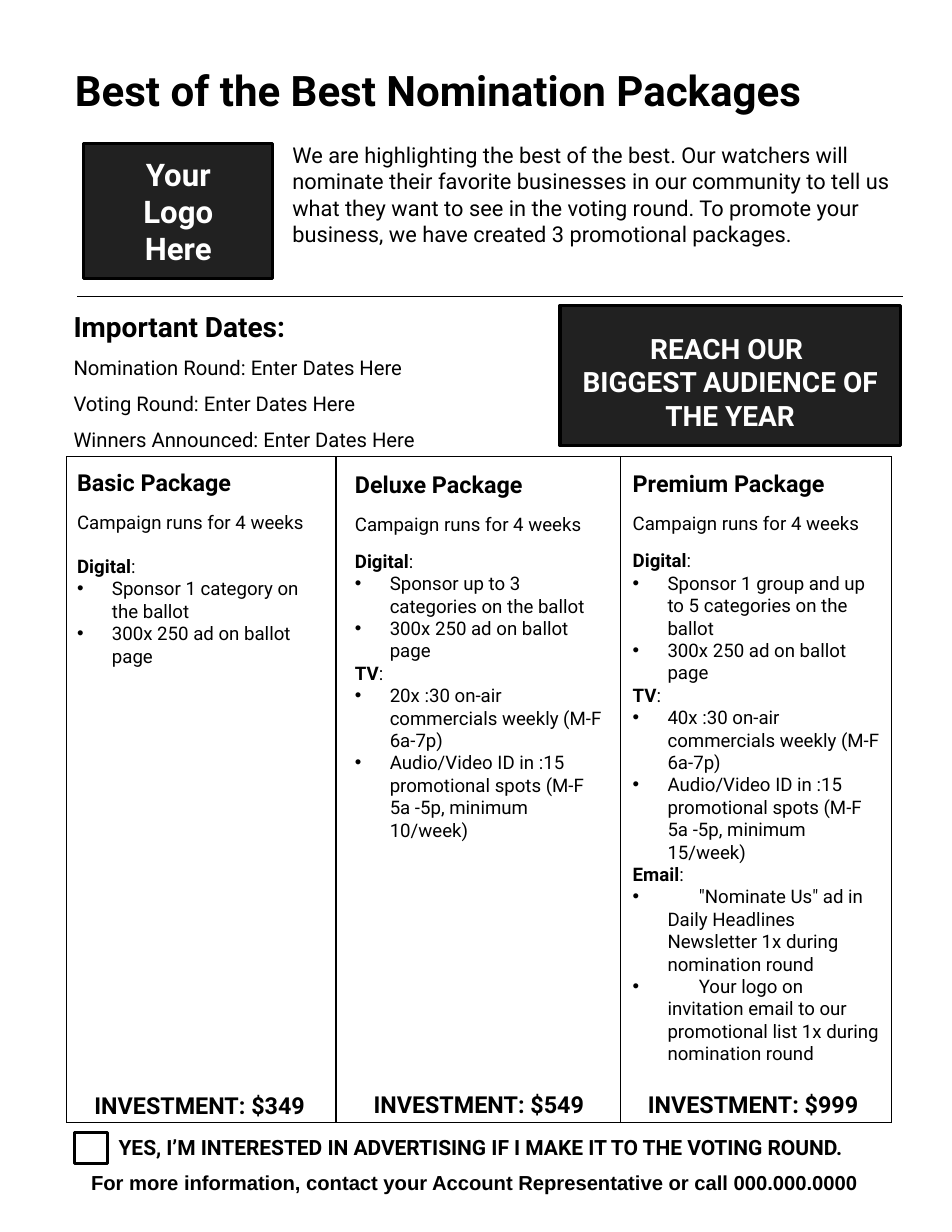
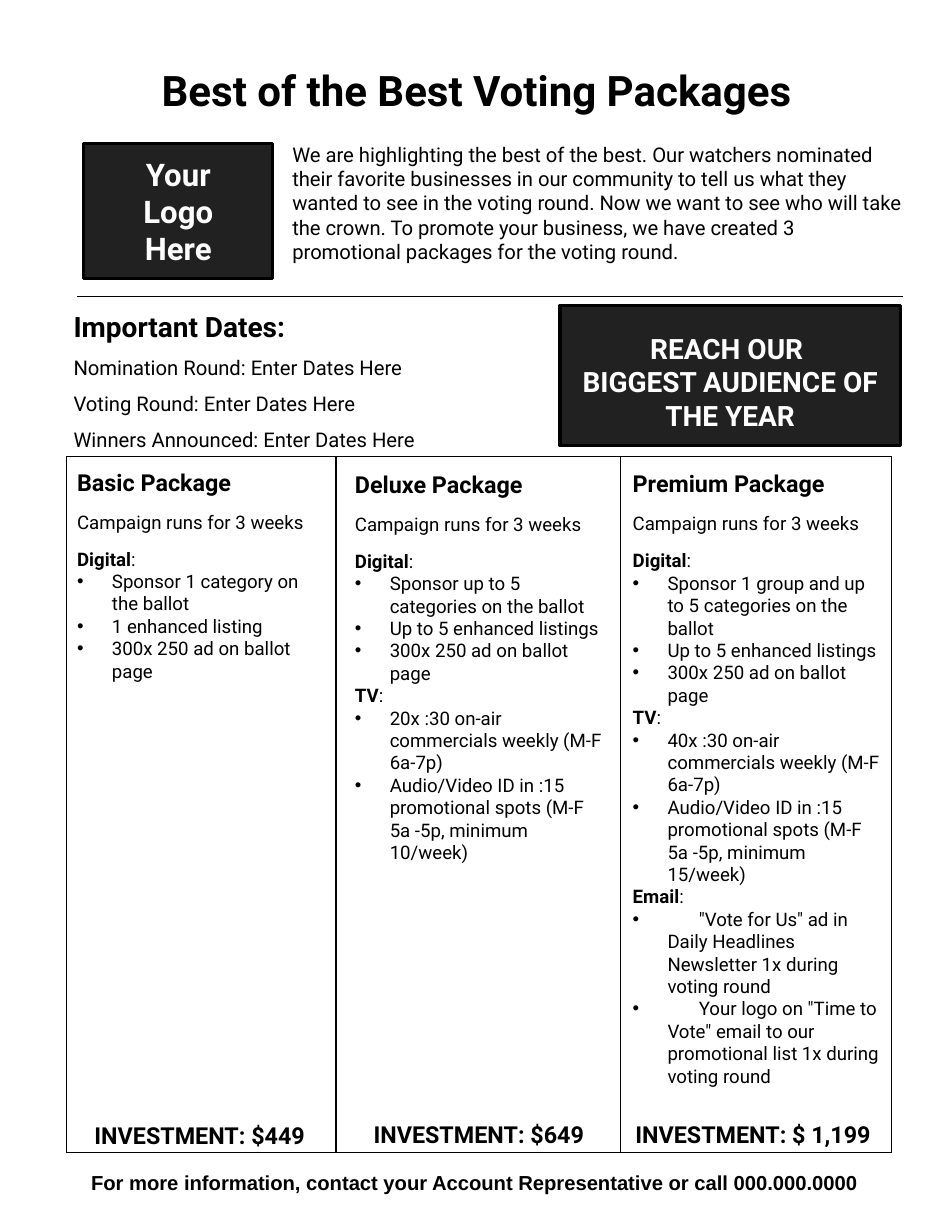
from pptx import Presentation
from pptx import util as u
from pptx.dml.color import RGBColor
from pptx.enum import shapes, text
from pptx.oxml import ns, xmlchemy

# Shared style
BLACK, DARK, WHITE = "000000", "212121", "FFFFFF"
FONT, PLAIN = "Roboto", "Arial"
LEFT, MID = text.PP_ALIGN.LEFT, text.PP_ALIGN.CENTER
INSET = 0.25

# Package grid, in cm
TOP, EDGES = 10.36, (1.5, 7.62, 14.07, 20.22)
COLS = (  # name, text left, top, height, price left, price width, price shift
    ("Basic", 1.5, 10.36, 11.2, 1.42, 6.22, 0.18),
    ("Deluxe", 7.8, 10.41, 15.1, 7.62, 6.48, 0.15),
    ("Premium", 14.1, 10.4, 15.0, 14.02, 6.12, 0.15),
)

# What both rounds offer
BANNER = "300x 250 ad on ballot page"
DATES = ("Nomination Round", "Voting Round", "Winners Announced")


def color(code):
    return RGBColor.from_string(code)


def box(at):
    return [u.Cm(n) for n in at]


def frame(shape, anchor=text.MSO_ANCHOR.TOP, top=INSET):
    body = shape.text_frame
    body.word_wrap = True
    body.vertical_anchor = anchor
    body.margin_left = body.margin_right = body.margin_bottom = u.Cm(INSET)
    body.margin_top = u.Cm(top)
    return body


def para(body, first=False, align=LEFT, before=0, lines=None):
    p = body.paragraphs[0] if first else body.add_paragraph()
    p.alignment = align
    if before:
        p.space_before = u.Pt(before)
    if lines:
        p.line_spacing = lines
    return p


def run(p, words, size, bold=False, ink=BLACK, face=FONT):
    r = p.add_run()
    r.text = words
    r.font.name, r.font.size, r.font.bold = face, u.Pt(size), bold
    r.font.color.rgb = color(ink)


def label(slide, at, words, size, bold=True, align=LEFT, face=FONT,
          anchor=text.MSO_ANCHOR.TOP):
    body = frame(slide.shapes.add_textbox(*box(at)), anchor)
    run(para(body, True, align), words, size, bold, face=face)


def panel(slide, at, fill=DARK):
    shape = slide.shapes.add_shape(shapes.MSO_SHAPE.RECTANGLE, *box(at))
    shape.shadow.inherit = False
    shape.fill.solid()
    shape.fill.fore_color.rgb = color(fill)
    shape.line.color.rgb = color(BLACK)
    shape.line.width = u.Pt(2)
    return shape


def sign(slide, at, rows, size, anchor, top=INSET):
    body = frame(panel(slide, at), anchor, top)
    for i, row in enumerate(rows):
        run(para(body, i == 0, MID), row, size, True, WHITE)


def rule(slide, x1, y1, x2, y2):
    line = slide.shapes.add_connector(
        shapes.MSO_CONNECTOR.STRAIGHT, *box((x1, y1, x2, y2)))
    line.line.color.rgb = color(BLACK)
    line.line.width = u.Pt(0.75)
    props = line._element.spPr
    props.append(xmlchemy.OxmlElement("a:effectLst"))


def bullet(p, stops=()):
    props = p._p.get_or_add_pPr()
    props.set("marL", str(u.Cm(0.79)))
    props.set("indent", str(-u.Cm(0.79)))
    ink = xmlchemy.OxmlElement("a:buClr")
    rgb = xmlchemy.OxmlElement("a:srgbClr")
    rgb.set("val", BLACK)
    ink.append(rgb)
    face = xmlchemy.OxmlElement("a:buFont")
    face.set("typeface", PLAIN)
    mark = xmlchemy.OxmlElement("a:buChar")
    mark.set("char", "•")
    props.extend([ink, face, mark])
    if stops:
        tabs = xmlchemy.OxmlElement("a:tabLst")
        for stop in stops:
            tab = xmlchemy.OxmlElement("a:tab")
            tab.set("pos", str(u.Cm(stop)))
            tab.set("algn", "l")
            tabs.append(tab)
        props.append(tabs)


def offer(slide, at, name, weeks, groups, gap):
    body = frame(slide.shapes.add_textbox(*box(at)))
    run(para(body, True), f"{name} Package", 15, True)
    run(para(body, before=9.4), f"Campaign runs for {weeks} weeks", 12)
    for i, (head, items) in enumerate(groups):
        p = para(body, before=0 if i else gap)
        run(p, head, 12, True)
        run(p, ":", 12)
        mail = head == "Email"
        for item in items:
            p = para(body)
            bullet(p, (0.7, 1.5) if mail else ())
            run(p, "\t" + item if mail else item, 12)


def grid(slide, foot):
    for y in (TOP, foot):
        rule(slide, EDGES[0], y, EDGES[-1], y)
    for x in EDGES:
        rule(slide, x, TOP, x, foot)


def tv(count, least):
    return ("TV", (
        f"{count}x :30 on-air commercials weekly (M-F 6a-7p)",
        f"Audio/Video ID in :15 promotional spots (M-F 5a -5p, "
        f"minimum {least}/week)"))


def offers(limit, single, several, mails):
    return (
        [("Digital", ("Sponsor 1 category on the ballot", *single, BANNER))],
        [("Digital", (f"Sponsor up to {limit} categories on the ballot",
                      *several, BANNER)), tv(20, 10)],
        [("Digital", ("Sponsor 1 group and up to 5 categories on the ballot",
                      *several, BANNER)), tv(40, 15), ("Email", mails)],
    )


def page(deck, title, align, intro, size, weeks, packs, gaps, prices, foot):
    slide = deck.slides.add_slide(deck.slide_layouts[6])

    # Heading
    label(slide, (1.45, 1.22, 18.72, 1.7), title, 27, align=align)
    label(slide, (6.38, 2.97, 14.35, 3.4), intro, size, False)
    sign(slide, (1.9, 3.25, 4.29, 3.07), ("Your", "Logo", "Here"), 20,
         text.MSO_ANCHOR.MIDDLE)
    rule(slide, 1.75, 6.73, 20.47, 6.73)

    # Dates and slogan
    body = frame(slide.shapes.add_textbox(*box((1.42, 6.76, 11.28, 3.4))))
    run(para(body, True), "Important Dates:", 18, True)
    for date in DATES:
        run(para(body, lines=1.5), f"{date}: Enter Dates Here", 13)
    sign(slide, (12.7, 6.93, 7.72, 3.18),
         ("REACH OUR ", "BIGGEST AUDIENCE OF THE YEAR"), 18,
         text.MSO_ANCHOR.TOP, 0.58)

    # Packages
    grid(slide, foot)
    for col, groups, gap, price in zip(COLS, packs, gaps, prices):
        name, x, y, high, left, wide, shift = col
        offer(slide, (x, y, 6.12, high), name, weeks, groups, gap)
        label(slide, (left, foot + shift - 1.32, wide, 1.32),
              f"INVESTMENT: ${price}", 15, align=MID,
              anchor=text.MSO_ANCHOR.BOTTOM)

    # Footer
    label(slide, (1.45, 26.29, 18.72, 1.02),
          "For more information, contact your Account Representative "
          "or call 000.000.0000 ", 13, align=MID, face=PLAIN)
    return slide


def consent(slide):
    label(slide, (2.44, 25.48, 18.72, 1.02),
          "YES, I’M INTERESTED IN ADVERTISING IF I MAKE IT TO THE "
          "VOTING ROUND.", 13.5)
    panel(slide, (1.7, 25.68, 0.74, 0.71), WHITE)


def main():
    deck = Presentation()
    deck.slide_width, deck.slide_height = u.Cm(21.59), u.Cm(27.94)

    # Nomination round
    slide = page(
        deck, "Best of the Best Nomination Packages", LEFT,
        "We are highlighting the best of the best. Our watchers will nominate "
        "their favorite businesses in our community to tell us what they want "
        "to see in the voting round. To promote your business, we have "
        "created 3 promotional packages.", 14, 4,
        offers(3, (), (), (
            "\"Nominate Us\" ad in Daily Headlines Newsletter 1x during "
            "nomination round",
            "Your logo on invitation email to our promotional list 1x during "
            "nomination round")),
        (14.1, 9.4, 9.4), ("349", "549", "999"), 25.45)
    consent(slide)

    # Voting round
    page(
        deck, "Best of the Best Voting Packages", MID,
        "We are highlighting the best of the best. Our watchers nominated "
        "their favorite businesses in our community to tell us what they "
        "wanted to see in the voting round. Now we want to see who will take "
        "the crown. To promote your business, we have created 3 promotional "
        "packages for the voting round.", 13, 3,
        offers(5, ("1 enhanced listing",), ("Up to 5 enhanced listings",), (
            "\"Vote for Us\" ad in Daily Headlines Newsletter 1x during "
            "voting round",
            "Your logo on \"Time to Vote\" email to our promotional list 1x "
            "during voting round")),
        (9.4, 9.4, 9.4), ("449", "649", " 1,199"), 26.14)

    deck.save("out.pptx")


if __name__ == "__main__":
    main()
